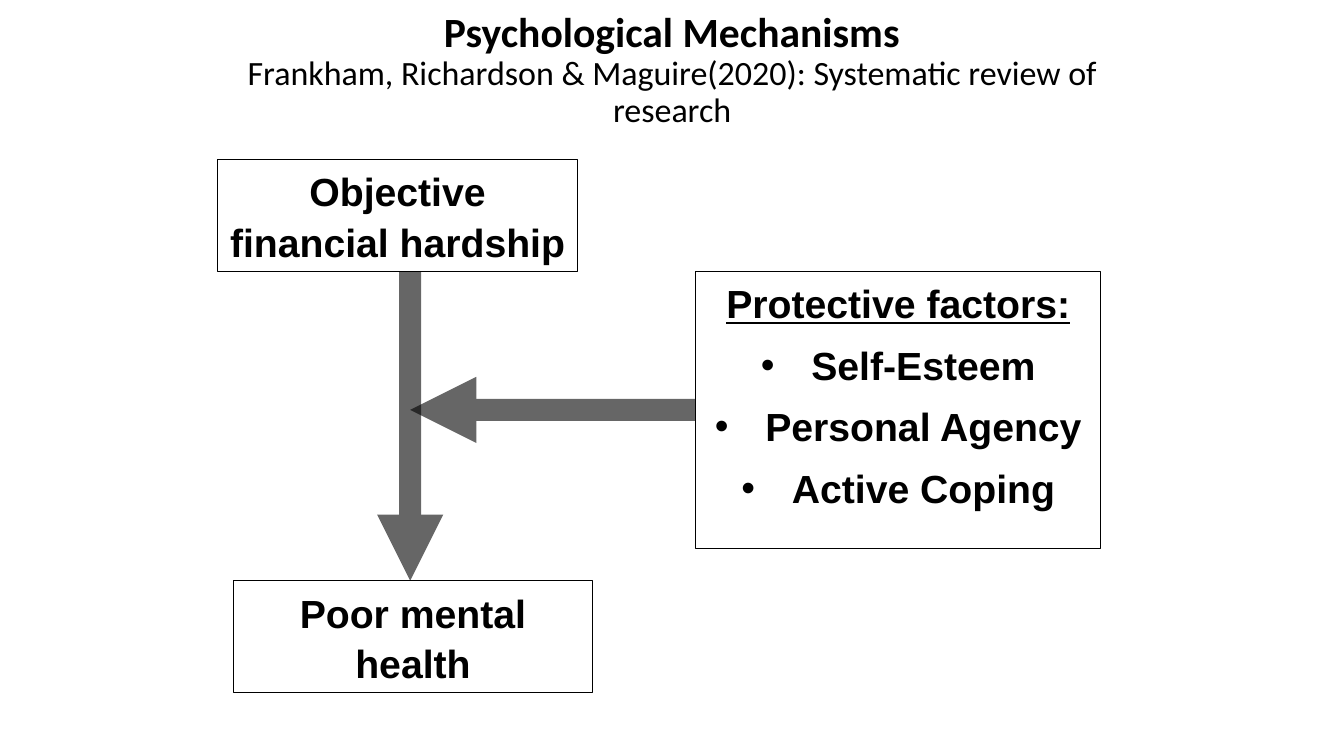
import pptx
import pptx.dml.color
import pptx.enum.shapes
import pptx.enum.text
import pptx.oxml
import pptx.oxml.ns
import pptx.util
from lxml import etree

Pt = pptx.util.Pt
BLACK = pptx.dml.color.RGBColor(0x00, 0x00, 0x00)
WHITE = pptx.dml.color.RGBColor(0xFF, 0xFF, 0xFF)
CENTER = pptx.enum.text.PP_ALIGN.CENTER
LEFT_SIDE = 1
BULLET_INDENT = Pt(36)


def add_drawing_element(parent, tag, **attributes):
    element = etree.SubElement(parent, pptx.oxml.ns.qn(tag))
    for name, value in attributes.items():
        element.set(name, str(value))
    return element


def add_run(paragraph, text, font_name, size, bold=True, underline=False):
    run = paragraph.add_run()
    run.text = text
    run.font.name = font_name
    run.font.size = Pt(size)
    run.font.bold = bold
    run.font.underline = underline
    run.font.color.rgb = BLACK


def add_title(slide, left, top, width, height, heading, citation):
    box = slide.shapes.add_textbox(Pt(left), Pt(top), Pt(width), Pt(height))
    frame = box.text_frame
    frame.word_wrap = True
    frame.vertical_anchor = pptx.enum.text.MSO_ANCHOR.MIDDLE
    paragraph = frame.paragraphs[0]
    paragraph.alignment = CENTER
    paragraph.line_spacing = 0.9
    add_run(paragraph, heading, "Calibri", 29.7)
    paragraph.add_line_break()
    add_run(paragraph, citation, "Calibri", 24.3, bold=False)


def add_box(slide, left, top, width, height, heading, factors=()):
    """Add an outlined box; a heading with factors below it is underlined."""
    box = slide.shapes.add_shape(
        pptx.enum.shapes.MSO_SHAPE.RECTANGLE,
        Pt(left), Pt(top), Pt(width), Pt(height))
    box.shadow.inherit = False
    box.fill.solid()
    box.fill.fore_color.rgb = WHITE
    box.line.color.rgb = BLACK
    box.line.width = Pt(0.5)
    frame = box.text_frame
    frame.word_wrap = True
    frame.vertical_anchor = pptx.enum.text.MSO_ANCHOR.TOP
    for index, text in enumerate((heading, *factors)):
        paragraph = frame.add_paragraph() if index else frame.paragraphs[0]
        paragraph.alignment = CENTER
        paragraph.line_spacing = 1.07
        paragraph.space_after = Pt(8)
        if index:
            properties = paragraph._p.get_or_add_pPr()
            properties.set("marL", str(BULLET_INDENT))
            properties.set("indent", str(-BULLET_INDENT))
            add_drawing_element(properties, "a:buFont", typeface="Arial")
            add_drawing_element(properties, "a:buChar", char="•")
        add_run(paragraph, text, "Arial", 28,
                underline=bool(factors) and index == 0)
    return box


def add_arrow(slide, start_x, start_y, end_x, end_y):
    """Add a thick translucent arrow."""
    arrow = slide.shapes.add_connector(
        pptx.enum.shapes.MSO_CONNECTOR.STRAIGHT,
        Pt(start_x), Pt(start_y), Pt(end_x), Pt(end_y))
    arrow.line.color.rgb = BLACK
    arrow.line.width = Pt(15.75)
    line = arrow.line._get_or_add_ln()
    color = line.find(".//" + pptx.oxml.ns.qn("a:srgbClr"))
    add_drawing_element(color, "a:alpha", val=60000)
    add_drawing_element(line, "a:tailEnd", type="triangle")
    add_drawing_element(arrow._element.spPr, "a:effectLst")
    return arrow


def add_mechanism_diagram(slide, left, top):
    """Place hardship above poor health, with protective factors at the right."""
    box_width, box_height = 257, 80
    hardship_bottom = top + box_height
    health_top = top + 301
    path_x = left + 137.5
    factors_left, factors_height = left + 341.3, 198
    factors_middle = hardship_bottom + factors_height / 2

    factors_box = add_box(
        slide, factors_left, hardship_bottom, 289.6, factors_height,
        "Protective factors:",
        ("Self-Esteem", "Personal Agency", "Active Coping"))
    add_box(slide, left, top, box_width, box_height,
            "Objective financial hardship")
    buffer_arrow = add_arrow(slide, factors_left, factors_middle,
                             path_x, factors_middle)
    buffer_arrow.begin_connect(factors_box, LEFT_SIDE)
    add_box(slide, left + 11, health_top, box_width, box_height,
            "Poor mental health")
    add_arrow(slide, path_x, hardship_bottom, path_x, health_top)


def main():
    presentation = pptx.Presentation()
    presentation.slide_width = Pt(960)
    presentation.slide_height = Pt(540)
    slide = presentation.slides.add_slide(presentation.slide_layouts[6])
    add_title(slide, 154, 5.8, 652.3, 89.3, "Psychological Mechanisms",
              "Frankham, Richardson & Maguire(2020): "
              "Systematic review of research")
    add_mechanism_diagram(slide, 155.5, 113.8)
    presentation.save("out.pptx")


if __name__ == "__main__":
    main()
